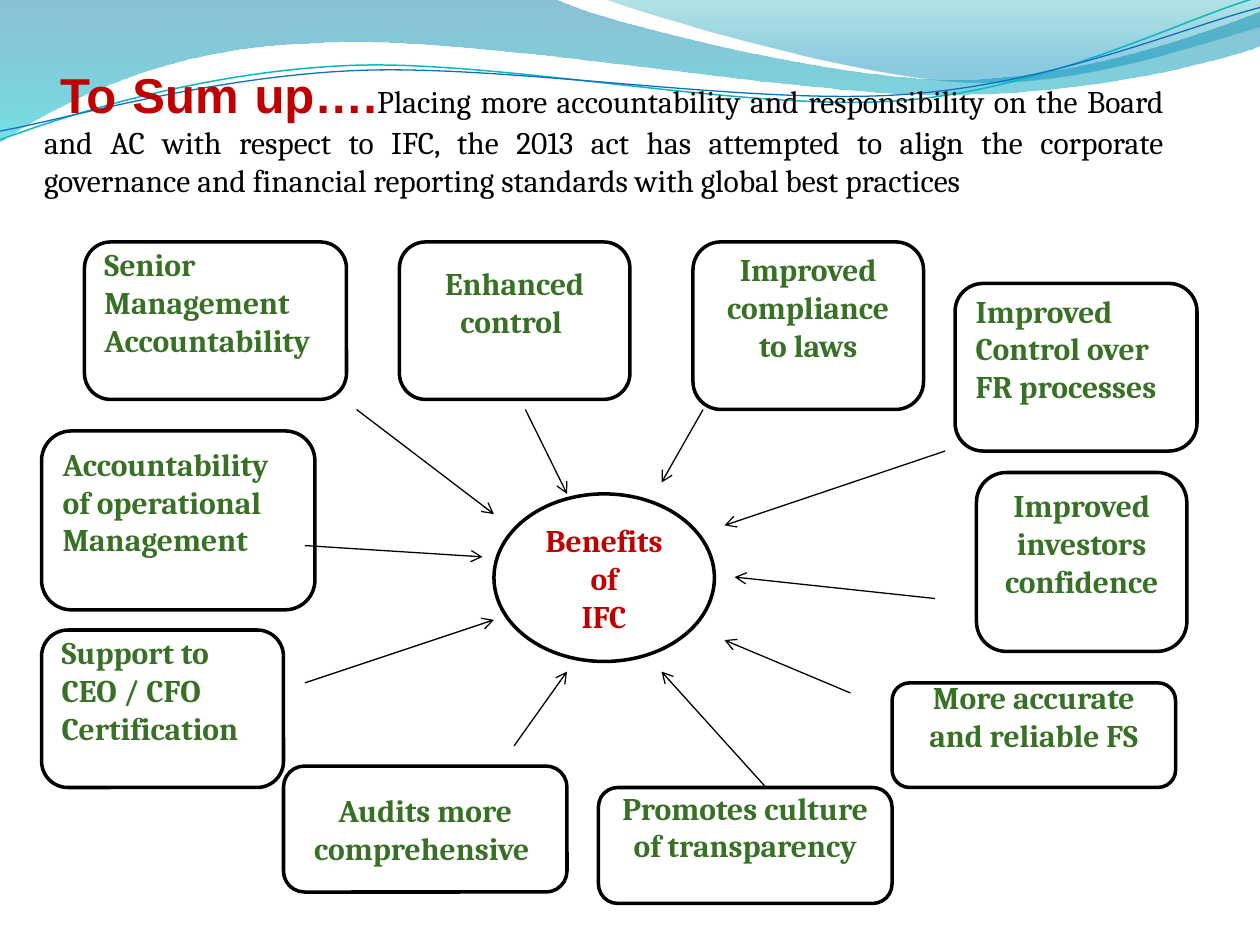
import dataclasses
import math

import lxml.etree
import pptx
import pptx.dml.color
import pptx.enum.shapes
import pptx.enum.text
import pptx.oxml.ns
import pptx.util

Inches = pptx.util.Inches
Pt = pptx.util.Pt
Shapes = pptx.enum.shapes.MSO_SHAPE
Align = pptx.enum.text.PP_ALIGN
Anchor = pptx.enum.text.MSO_ANCHOR
qn = pptx.oxml.ns.qn


@dataclasses.dataclass(frozen=True)
class Theme:
    ink: str = "000000"
    paper: str = "FFFFFF"
    red: str = "C00000"
    green: str = "387026"
    teal_line: str = "0AB8BF"
    blue_line: str = "0F6FC6"
    body_font: str = "Cambria"
    title_font: str = "Arial"
    body_size: float = 18
    title_size: float = 28
    outline: float = 2
    arrow: float = 0.75


THEME = Theme()
LINE_HEIGHT = 0.3
CURVE_TILT = -2.7

# Waves: a start point, then straight (1 point) or cubic (3 points) segments.
LEFT_WAVE = [
    [(0, 0)], [(4.4, -0.01)], [(4.76, 0.17), (6.64, 0.63), (7.58, 0.63)],
    [(8.53, 0.63), (9.58, 0.26), (10, 0.09)], [(10.01, 0.36)],
    [(9.83, 0.44), (8.7, 0.76), (7.46, 0.75)], [(6.22, 0.75), (3.82, 0.28), (2.57, 0.34)],
    [(1.29, 0.36), (0.46, 0.83), (-0.01, 1.13)], [(0, 0)],
]
RIGHT_WAVE = [
    [(4.79, -0.01)], [(5.09, 0.11), (6.82, 0.62), (7.69, 0.65)],
    [(8.56, 0.69), (9.61, 0.32), (10, 0.21)], [(10, 0)], [(4.79, -0.01)],
]
TEAL_CURVE = [
    [(0, 1.11)], [(0.48, 0.93), (1.58, 0.57), (2.77, 0.52)],
    [(3.95, 0.47), (5.93, 0.89), (7.13, 0.8)], [(8.33, 0.71), (9.38, 0.15), (9.98, -0.02)],
]
BLUE_CURVE = [
    [(0, 1.04)], [(0.47, 0.96), (1.64, 0.61), (2.83, 0.56)],
    [(4.03, 0.51), (5.97, 0.84), (7.17, 0.75)], [(8.36, 0.67), (9.41, 0.21), (10, 0.06)],
]

# Box, paragraphs, alignment, lines left free at the bottom.
BENEFITS = [
    ((0.67, 1.92, 2.08, 1.25), ["Senior", "Management", "Accountability"], Align.LEFT, 1),
    ((3.17, 1.92, 1.83, 1.25), ["Enhanced control "], Align.CENTER, 1),
    ((5.5, 1.92, 1.83, 1.33), ["Improved compliance to laws"], Align.CENTER, 1),
    ((7.58, 2.25, 1.92, 1.33), ["Improved Control over", "FR processes"], Align.LEFT, 1),
    ((7.75, 3.75, 1.67, 1.42), ["Improved investors confidence"], Align.CENTER, 1),
    ((0.33, 3.42, 2.17, 1.42), ["Accountability", "of operational", "Management"], Align.LEFT, 1),
    ((2.25, 6.08, 2.25, 1), ["Audits more comprehensive "], Align.CENTER, 0),
    ((4.75, 6.25, 2.33, 0.92), ["Promotes culture of transparency"], Align.CENTER, 1),
    ((7.08, 5.42, 2.25, 0.83), ["More accurate and reliable FS"], Align.CENTER, 1),
    ((0.33, 5, 1.92, 1.25), ["Support to", "CEO / CFO", "Certification"], Align.LEFT, 1),
]

ARROWS = [
    (2.83, 3.25, 3.92, 4.08), (2.42, 4.33, 3.83, 4.42), (4.17, 3.25, 4.5, 3.92),
    (5.58, 3.25, 5.25, 3.83), (7.5, 3.58, 5.75, 4.17), (7.42, 4.75, 5.83, 4.58),
    (6.75, 5.5, 5.75, 5.08), (6.08, 6.25, 5.25, 5.33), (2.42, 5.42, 3.92, 4.92),
    (4.08, 5.92, 4.5, 5.33),
]


def rgb(value):
    return pptx.dml.color.RGBColor.from_string(value)


def add_text(paragraph, text, *, color=THEME.ink, size=THEME.body_size,
             font=THEME.body_font, bold=False, align=Align.LEFT):
    paragraph.alignment = align
    run = paragraph.add_run()
    run.text = text
    run.font.name = font
    run.font.size = Pt(size)
    run.font.bold = bold
    run.font.color.rgb = rgb(color)


def turn(segments, degrees, center):
    """Rotate every point clockwise about the center."""
    cosine, sine = math.cos(math.radians(degrees)), math.sin(math.radians(degrees))
    cx, cy = center
    return [[(cx + (x - cx) * cosine - (y - cy) * sine,
              cy + (x - cx) * sine + (y - cy) * cosine) for x, y in segment]
            for segment in segments]


class SlideBuilder:
    def __init__(self, slide, theme):
        self.slide = slide
        self.theme = theme

    def freeform(self, segments, closed):
        """Join the segment ends, then bend the cubic segments."""
        ends = [tuple(map(Inches, segment[-1])) for segment in segments]
        builder = self.slide.shapes.build_freeform(*ends[0], scale=1.0)
        builder.add_line_segments(ends[1:], close=closed)
        shape = builder.convert_to_shape()
        shape.shadow.inherit = False
        lines = list(shape.element.iter(qn("a:lnTo")))
        for line, segment in zip(lines, segments[1:]):
            if len(segment) == 1:
                continue
            cubic = lxml.etree.Element(qn("a:cubicBezTo"))
            for x, y in segment:
                point = lxml.etree.SubElement(cubic, qn("a:pt"))
                point.set("x", str(Inches(x) - shape.left))
                point.set("y", str(Inches(y) - shape.top))
            line.getparent().replace(line, cubic)
        return shape

    def wave(self, segments, stops):
        """Fill an outline from top to bottom; a stop is position, colour, opacity."""
        shape = self.freeform(segments, closed=True)
        shape.line.fill.background()
        shape.fill.gradient()
        shape.fill.gradient_angle = 270
        for stop, (position, color, _) in zip(shape.fill.gradient_stops, stops):
            stop.position = position
            stop.color.rgb = rgb(color)
        for element, (_, _, opacity) in zip(shape.element.iter(qn("a:srgbClr")), stops):
            alpha = lxml.etree.SubElement(element, qn("a:alpha"))
            alpha.set("val", str(opacity * 1000))

    def curve(self, segments, center, color, width):
        shape = self.freeform(turn(segments, -CURVE_TILT, center), closed=False)
        shape.rotation = CURVE_TILT
        shape.fill.background()
        shape.line.color.rgb = rgb(color)
        shape.line.width = Pt(width)

    def title(self, box, lead, text):
        frame = self.slide.shapes.add_textbox(*map(Inches, box)).text_frame
        frame.word_wrap = True
        frame.vertical_anchor = Anchor.MIDDLE
        frame.margin_left, frame.margin_top = Inches(0.35), Inches(0.5)
        frame.margin_right, frame.margin_bottom = Inches(0.76), Inches(0.16)
        paragraph = frame.paragraphs[0]
        add_text(paragraph, lead, color=self.theme.red, size=self.theme.title_size,
                 font=self.theme.title_font, bold=True)
        add_text(paragraph, text, align=Align.JUSTIFY)

    def node(self, kind, box, lines, color, align=Align.CENTER, free_lines=0):
        shape = self.slide.shapes.add_shape(kind, *map(Inches, box))
        shape.shadow.inherit = False
        shape.fill.solid()
        shape.fill.fore_color.rgb = rgb(self.theme.paper)
        shape.line.color.rgb = rgb(self.theme.ink)
        shape.line.width = Pt(self.theme.outline)
        frame = shape.text_frame
        frame.word_wrap = True
        frame.vertical_anchor = Anchor.MIDDLE
        frame.margin_bottom = Inches(0.05 + free_lines * LINE_HEIGHT)
        for index, line in enumerate(lines):
            paragraph = frame.add_paragraph() if index else frame.paragraphs[0]
            add_text(paragraph, line, color=color, bold=True, align=align)

    def arrow(self, ends):
        connector = self.slide.shapes.add_connector(
            pptx.enum.shapes.MSO_CONNECTOR.STRAIGHT, *map(Inches, ends))
        connector.line.color.rgb = rgb(self.theme.ink)
        connector.line.width = Pt(self.theme.arrow)
        properties = connector.element.spPr
        head = lxml.etree.SubElement(properties.find(qn("a:ln")), qn("a:tailEnd"))
        head.set("type", "arrow")
        lxml.etree.SubElement(properties, qn("a:effectLst"))


def main():
    presentation = pptx.Presentation()
    presentation.slide_width, presentation.slide_height = Inches(10), Inches(7.5)
    slide = presentation.slides.add_slide(presentation.slide_layouts[6])
    builder = SlideBuilder(slide, THEME)

    builder.wave(LEFT_WAVE, [(0, "0074A1", 45), (1, "00C6CF", 55)])
    builder.wave(RIGHT_WAVE, [(0, "00A1A9", 30), (0.8, "008BBF", 45)])
    builder.curve(TEAL_CURVE, (4.99, 0.58), THEME.teal_line, 0.85)
    builder.curve(BLUE_CURVE, (5, 0.59), THEME.blue_line, 0.75)
    builder.title(
        (0, 0, 10, 1.75), " To Sum up….",
        "Placing more accountability and responsibility on the Board and AC with respect "
        "to IFC, the 2013 act has attempted to align the corporate governance and "
        "financial reporting standards with global best practices")
    builder.node(Shapes.FLOWCHART_CONNECTOR, (3.92, 3.92, 1.75, 1.33),
                 ["Benefits of", "IFC"], THEME.red)
    for box, lines, align, free_lines in BENEFITS:
        builder.node(Shapes.FLOWCHART_ALTERNATE_PROCESS, box, lines, THEME.green,
                     align, free_lines)
    for ends in ARROWS:
        builder.arrow(ends)

    presentation.save("out.pptx")


if __name__ == "__main__":
    main()
